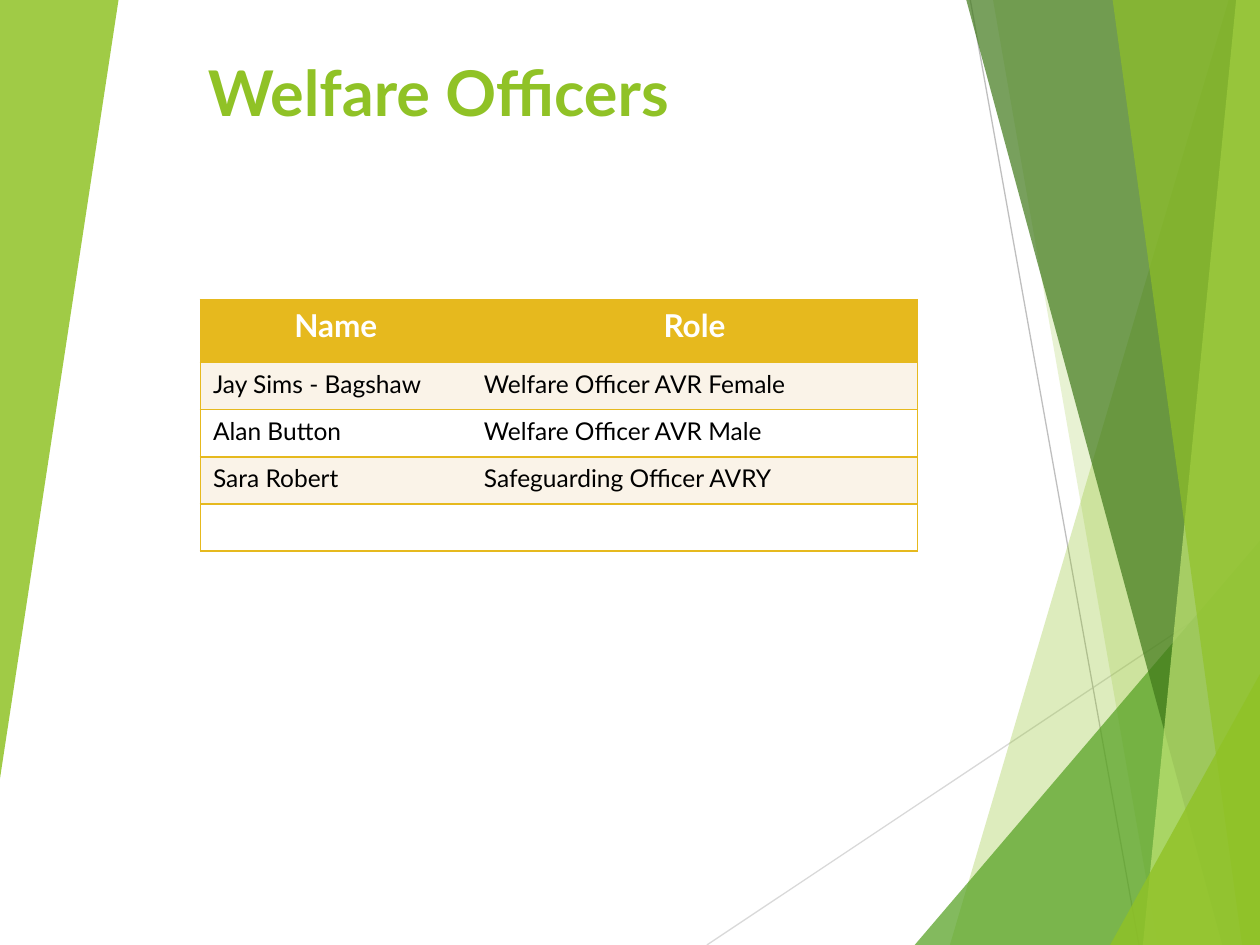
from dataclasses import dataclass

from lxml.etree import SubElement
from pptx import Presentation
from pptx.dml.color import RGBColor
from pptx.enum.shapes import MSO_CONNECTOR
from pptx.enum.text import MSO_ANCHOR, PP_ALIGN
from pptx.oxml.ns import qn
from pptx.util import Cm, Pt

WIDE, HIGH = 25.4, 19.05
FONT = "Lato"
HUES = {
    "lime": "90C226", "green": "54A021", "forest": "3F7819", "pale": "C0E474",
    "gold": "E6B91E", "cream": "FAF3E8", "white": "FFFFFF", "black": "000000",
    "mist": "D9D9D9", "grey": "BFBFBF",
}


@dataclass
class Facet:
    points: list[tuple[float, float]]
    hue: str
    alpha: int


@dataclass
class Ray:
    start: tuple[float, float]
    end: tuple[float, float]
    hue: str


@dataclass
class Style:
    size: int
    hue: str
    bold: bool = False


def band(top: float, foot: float, hue: str, alpha: int) -> Facet:
    """Full-height facet from a slanted left edge to the slide's right edge."""
    return Facet([(top, 0), (foot, HIGH), (WIDE, HIGH), (WIDE, 0)], hue, alpha)


def wedge(left: float, top: float, hue: str, alpha: int) -> Facet:
    """Triangle in the bottom right corner."""
    return Facet([(left, HIGH), (WIDE, top), (WIDE, HIGH)], hue, alpha)


RAYS = [
    Ray((14.25, HIGH), (WIDE, 11.62), "mist"),
    Ray((19.56, 0), (22.96, HIGH), "grey"),
]
FACETS = [
    band(24.77, 19.15, "lime", 30),
    band(20.02, 23.34, "lime", 20),
    wedge(18.44, 10.9, "green", 72),
    band(19.48, 24.64, "forest", 70),
    band(24.92, 23.04, "pale", 70),
    band(22.43, 25.04, "lime", 65),
    wedge(22.38, 13.59, "lime", 80),
    Facet([(0, 0), (2.39, 0), (0, 15.7)], "lime", 85),
]
ROWS = [
    ("Name", "Role"),
    ("Jay Sims - Bagshaw", "Welfare Officer AVR Female"),
    ("Alan Button", "Welfare Officer AVR Male"),
    ("Sara Robert", "Safeguarding Officer AVRY"),
    ("", ""),
]
COLS = [5.46, 9]
TITLE = Style(36, "lime", True)
HEAD = Style(18, "white", True)
BODY = Style(14, "black")


def tint(hue: str) -> RGBColor:
    return RGBColor.from_string(HUES[hue])


def draw_ray(slide, ray: Ray) -> None:
    ends = [Cm(n) for n in ray.start + ray.end]
    line = slide.shapes.add_connector(MSO_CONNECTOR.STRAIGHT, *ends)
    line.line.color.rgb = tint(ray.hue)
    line.line.width = Pt(0.75)
    SubElement(line._element.spPr, qn("a:effectLst"))


def draw_facet(slide, facet: Facet) -> None:
    first, *rest = [(Cm(x), Cm(y)) for x, y in facet.points]
    pen = slide.shapes.build_freeform(*first)
    pen.add_line_segments(rest, close=True)
    shape = pen.convert_to_shape()
    shape.shadow.inherit = False
    shape.line.fill.background()
    shape.fill.solid()
    shape.fill.fore_color.rgb = tint(facet.hue)
    color = shape._element.spPr.find(f".//{qn('a:srgbClr')}")
    SubElement(color, qn("a:alpha"), val=str(facet.alpha * 1000))


def set_text(frame, text: str, style: Style) -> None:
    frame.text = text
    para = frame.paragraphs[0]
    for run in para.runs:
        run.font.name = FONT
        run.font.size = Pt(style.size)
        run.font.bold = style.bold
        run.font.color.rgb = tint(style.hue)
    if not text:
        SubElement(para._p, qn("a:endParaRPr"), sz=str(style.size * 100))


def set_edges(cell, shown: str) -> None:
    """Draw the sides named in shown (of L, R, T, B) and blank the others."""
    props = cell._tc.get_or_add_tcPr()
    for side in "LRTB":
        edge = SubElement(props, qn(f"a:ln{side}"), w=str(Pt(1)))
        if side in shown:
            fill = SubElement(edge, qn("a:solidFill"))
            SubElement(fill, qn("a:srgbClr"), val=HUES["gold"])
        else:
            SubElement(edge, qn("a:noFill"))


def draw_title(slide, text: str) -> None:
    box = slide.shapes.add_textbox(Cm(3.94), Cm(0.1), Cm(21.4), Cm(2.62))
    box.text_frame.word_wrap = True
    box.text_frame.vertical_anchor = MSO_ANCHOR.BOTTOM
    set_text(box.text_frame, text, TITLE)


def draw_table(slide) -> None:
    tall = [1.27] + [0.95] * (len(ROWS) - 1)
    table = slide.shapes.add_table(
        len(ROWS), len(COLS), Cm(4.04), Cm(6.04), Cm(sum(COLS)), Cm(sum(tall))
    ).table
    table.first_row = table.horz_banding = False
    for col, width in zip(table.columns, COLS):
        col.width = Cm(width)
    for i, (row, names) in enumerate(zip(table.rows, ROWS)):
        row.height = Cm(tall[i])
        hue = "gold" if i == 0 else "cream" if i % 2 else "white"
        for cell, text, edges in zip(row.cells, names, ("LTB", "RTB")):
            set_edges(cell, edges)
            cell.fill.solid()
            cell.fill.fore_color.rgb = tint(hue)
            set_text(cell.text_frame, text, BODY if i else HEAD)
            if i == 0:
                cell.text_frame.paragraphs[0].alignment = PP_ALIGN.CENTER


def main() -> None:
    deck = Presentation()
    deck.slide_width, deck.slide_height = Cm(WIDE), Cm(HIGH)
    slide = deck.slides.add_slide(deck.slide_layouts[6])
    for ray in RAYS:
        draw_ray(slide, ray)
    for facet in FACETS:
        draw_facet(slide, facet)
    draw_title(slide, "Welfare Officers")
    draw_table(slide)
    deck.save("out.pptx")


if __name__ == "__main__":
    main()
